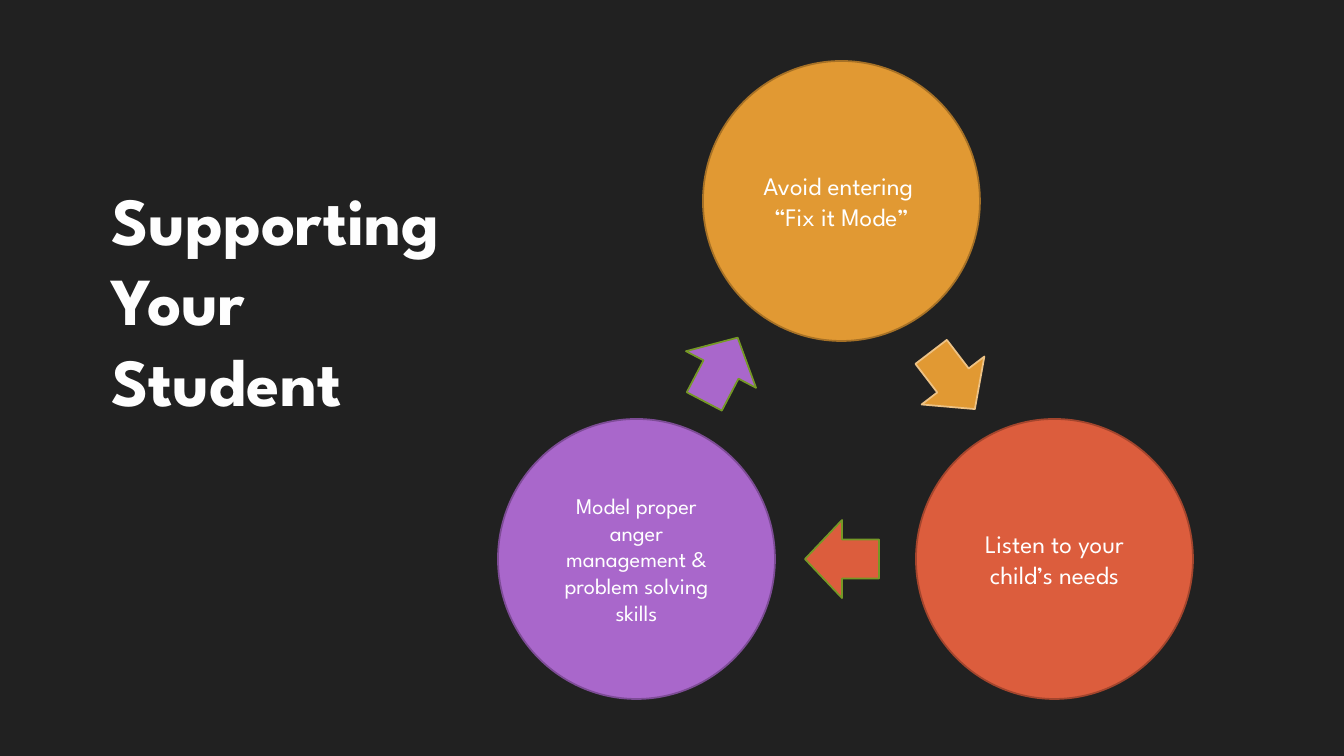
from dataclasses import dataclass

from lxml import etree
from pptx import Presentation, util as u
from pptx.dml.color import RGBColor
from pptx.enum import shapes as sh, text as tx
from pptx.oxml.ns import qn

FONT = "League Spartan"
BALL_W, BALL_H = 277, 280


@dataclass
class Step:
    """A circle of the cycle."""
    x: int
    y: int
    fill: str
    line: str
    size: int
    lines: list[str]


@dataclass
class Arrow:
    """A block arrow between two circles."""
    x: int
    y: int
    w: int
    h: int
    turn: float
    fill: str
    line: str


STEPS = [
    Step(703, 61, "E19933", "A67126", 18, ["Avoid entering ", "“Fix it Mode”"]),
    Step(916, 419, "DC5D3D", "A3452D", 18, ["Listen to your child’s needs"]),
    Step(498, 419, "A967CB", "7D4C96", 16,
         ["Model proper anger management & problem solving skills"]),
]
ARROWS = [
    Arrow(917, 341, 72, 79, 52.6, "E19933", "EDC285"),
    Arrow(805, 520, 74, 78, 180, "DC5D3D", "759826"),
    Arrow(685, 330, 72, 79, 297.6, "A967CB", "759826"),
]


def px(n: int) -> u.Emu:
    """Turn pixels into EMU."""
    return u.Emu(round(n * 914400 / 100.8))


def rgb(code: str) -> RGBColor:
    """Turn a hex string into a colour."""
    return RGBColor.from_string(code)


def put(item: object, **vals: object) -> None:
    """Set several attributes on one object."""
    for key, val in vals.items():
        setattr(item, key, val)


def style(par, size: int, color: str, bold: bool, align) -> None:
    """Format a paragraph and its runs."""
    put(par, alignment=align, line_spacing=1.0)
    for run in par.runs:
        put(run.font, name=FONT, size=u.Pt(size), bold=bold)
        run.font.color.rgb = rgb(color)


def shade(run) -> None:
    """Give a run a soft drop shadow."""
    fx = etree.Element(qn("a:effectLst"))
    cast = etree.SubElement(fx, qn("a:outerShdw"), blurRad="50800",
                            dist="38100", dir="2700000", algn="tl")
    tone = etree.SubElement(cast, qn("a:srgbClr"), val="000000")
    etree.SubElement(tone, qn("a:alpha"), val="45000")
    run.font.fill._xPr.find(qn("a:solidFill")).addnext(fx)


def shape(slide, kind, box: tuple[int, int, int, int], fill: str, line: str):
    """Draw a filled and outlined preset shape."""
    item = slide.shapes.add_shape(kind, *map(px, box))
    item.shadow.inherit = False
    item.fill.solid()
    item.fill.fore_color.rgb = rgb(fill)
    item.line.color.rgb = rgb(line)
    item.line.width = u.Pt(1.25)
    return item


def ball(slide, step: Step) -> None:
    """Draw one step with its text."""
    item = shape(slide, sh.MSO_SHAPE.FLOWCHART_CONNECTOR,
                 (step.x, step.y, BALL_W, BALL_H), step.fill, step.line)
    frame = item.text_frame
    put(frame, word_wrap=True, vertical_anchor=tx.MSO_ANCHOR.MIDDLE,
        margin_left=px(16), margin_right=px(16))
    frame.text = "\n".join(step.lines)
    for par in frame.paragraphs:
        style(par, step.size, "FFFFFF", False, tx.PP_ALIGN.CENTER)


def arrow(slide, part: Arrow) -> None:
    """Draw one arrow turned to its angle."""
    item = shape(slide, sh.MSO_SHAPE.RIGHT_ARROW,
                 (part.x, part.y, part.w, part.h), part.fill, part.line)
    item.rotation = part.turn


def head(slide) -> None:
    """Fill, move and format the title."""
    item = slide.shapes.title
    put(item, left=px(101), top=px(145), width=px(498), height=px(280))
    frame = item.text_frame
    frame.text = "Supporting Your \vStudent"
    put(frame, word_wrap=True, auto_size=tx.MSO_AUTO_SIZE.NONE,
        vertical_anchor=tx.MSO_ANCHOR.BOTTOM, margin_right=px(50))
    par = frame.paragraphs[0]
    style(par, 48, "FEFEFE", True, tx.PP_ALIGN.LEFT)
    for run in par.runs:
        shade(run)


def main() -> None:
    """Build and save the slide."""
    deck = Presentation()
    put(deck, slide_width=px(1344), slide_height=px(756))
    slide = deck.slides.add_slide(deck.slide_layouts[5])
    back = slide.background.fill
    back.solid()
    back.fore_color.rgb = rgb("212121")
    head(slide)
    for step in STEPS:
        ball(slide, step)
    for part in ARROWS:
        arrow(slide, part)
    deck.save("out.pptx")


if __name__ == "__main__":
    main()
